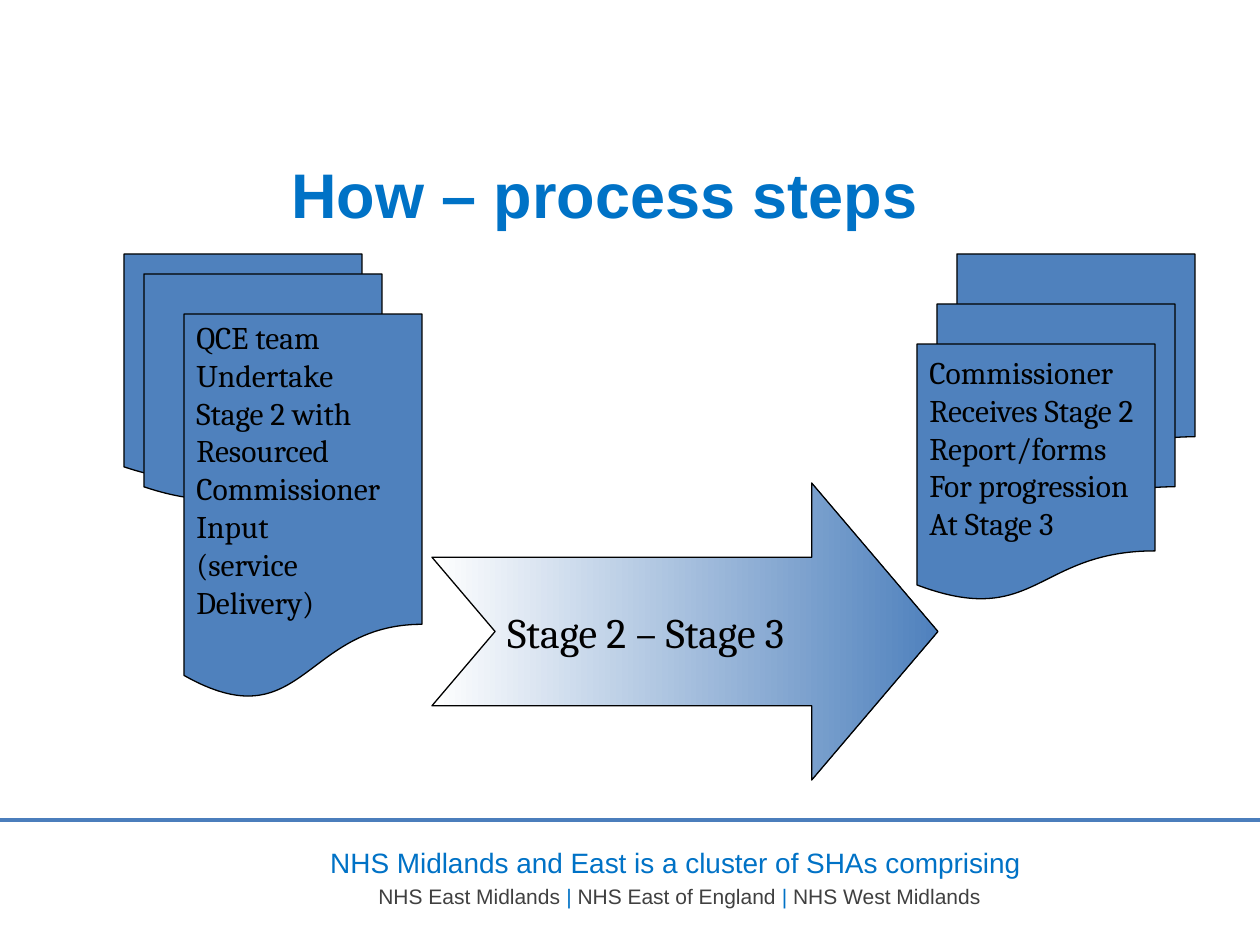
from lxml.etree import SubElement
from pptx import Presentation
from pptx.dml.color import RGBColor
from pptx.enum.shapes import MSO_CONNECTOR, MSO_SHAPE
from pptx.enum.text import MSO_ANCHOR, PP_ALIGN
from pptx.oxml.ns import qn
from pptx.util import Inches, Pt

SCALE = Inches(1) / 126
BLUE, STEEL, RULE = "0072C6", "4F81BD", "4B7EBC"
GREY, BLACK, WHITE = "404040", "000000", "FFFFFF"


def px(*lengths):
    return [round(length * SCALE) for length in lengths]


def color(value):
    return RGBColor.from_string(value)


class SlideBuilder:
    """Draws styled elements on the current slide."""

    heading = {"name": "Arial", "size": Pt(36), "bold": True}
    lead = {"name": "Arial", "size": Pt(16)}
    detail = {"name": "Arial", "size": Pt(12)}
    note = {"name": "Cambria", "size": Pt(18)}
    label = {"name": "Cambria", "size": Pt(24)}

    def __init__(self, deck):
        self.page = deck.slides.add_slide(deck.slide_layouts[6])

    def fill_text(self, box, lines, align, anchor, wrap=True, gap=0):
        frame = box.text_frame
        frame.word_wrap = wrap
        frame.vertical_anchor = anchor
        for index, (style, spans) in enumerate(lines):
            para = frame.add_paragraph() if index else frame.paragraphs[0]
            para.alignment = align
            if index:
                para.space_before = Pt(gap)
            for text, tint in spans:
                span = para.add_run()
                span.text = text
                for name, value in style.items():
                    setattr(span.font, name, value)
                span.font.color.rgb = color(tint)

    def text(self, area, lines, anchor=MSO_ANCHOR.TOP, gap=0):
        box = self.page.shapes.add_textbox(*px(*area))
        self.fill_text(box, lines, PP_ALIGN.CENTER, anchor, gap=gap)

    def shape(self, kind, area, style, lines=()):
        box = self.page.shapes.add_shape(kind, *px(*area))
        box.shadow.inherit = False
        box.fill.solid()
        box.fill.fore_color.rgb = color(STEEL)
        box.line.color.rgb = color(BLACK)
        box.line.width = Pt(0.75)
        rows = [(style, [(line, BLACK)]) for line in lines]
        self.fill_text(box, rows, PP_ALIGN.LEFT, MSO_ANCHOR.MIDDLE, wrap=False)
        return box

    def document(self, area, lines=()):
        self.shape(MSO_SHAPE.FLOWCHART_DOCUMENT, area, self.note, lines)

    def arrow(self, area, caption):
        box = self.shape(MSO_SHAPE.NOTCHED_RIGHT_ARROW, area, self.label, [caption])
        box.adjustments[0], box.adjustments[1] = 0.5, 0.425
        box.fill.gradient()
        box.fill.gradient_angle = 0
        for stop, tint in zip(box.fill.gradient_stops, (WHITE, STEEL)):
            stop.color.rgb = color(tint)

    def rule(self, start, end):
        line = self.page.shapes.add_connector(MSO_CONNECTOR.STRAIGHT, *px(*start, *end))
        line.line.color.rgb = color(RULE)
        line.line.width = Pt(1.75)
        SubElement(line._element.spPr, qn("a:effectLst"))


def main():
    deck = Presentation()
    deck.slide_width, deck.slide_height = px(1260, 945)
    slide = SlideBuilder(deck)

    slide.rule((0, 820), (1260, 820))
    slide.text((64, 135, 1081, 117),
               [(slide.heading, [("How – process steps", BLUE)])], MSO_ANCHOR.MIDDLE)
    slide.text((203, 839, 953, 89), [
        (slide.lead, [("NHS Midlands and East is a cluster of SHAs comprising ", BLUE)]),
        (slide.detail, [("NHS East Midlands ", GREY), ("|", BLUE),
                        (" NHS East of England", GREY), (" |", BLUE),
                        (" NHS West Midlands", GREY)]),
    ], gap=3)

    slide.arrow((432, 483, 506, 297), "Stage 2 – Stage 3")

    width, height = 238, 228
    for left, top in ((957, 254), (937, 304)):
        slide.document((left, top, width, height))
    slide.document((917, 344, width, 258),
                   ["Commissioner", "Receives Stage 2", "Report/forms",
                    "For progression", "At Stage 3"])

    for left, top in ((124, 254), (144, 274)):
        slide.document((left, top, width, height))
    slide.document((184, 314, width, 387),
                   ["QCE team", "Undertake", "Stage 2 with", "Resourced",
                    "Commissioner", "Input", "(service", "Delivery)"])

    deck.save("out.pptx")


if __name__ == "__main__":
    main()
